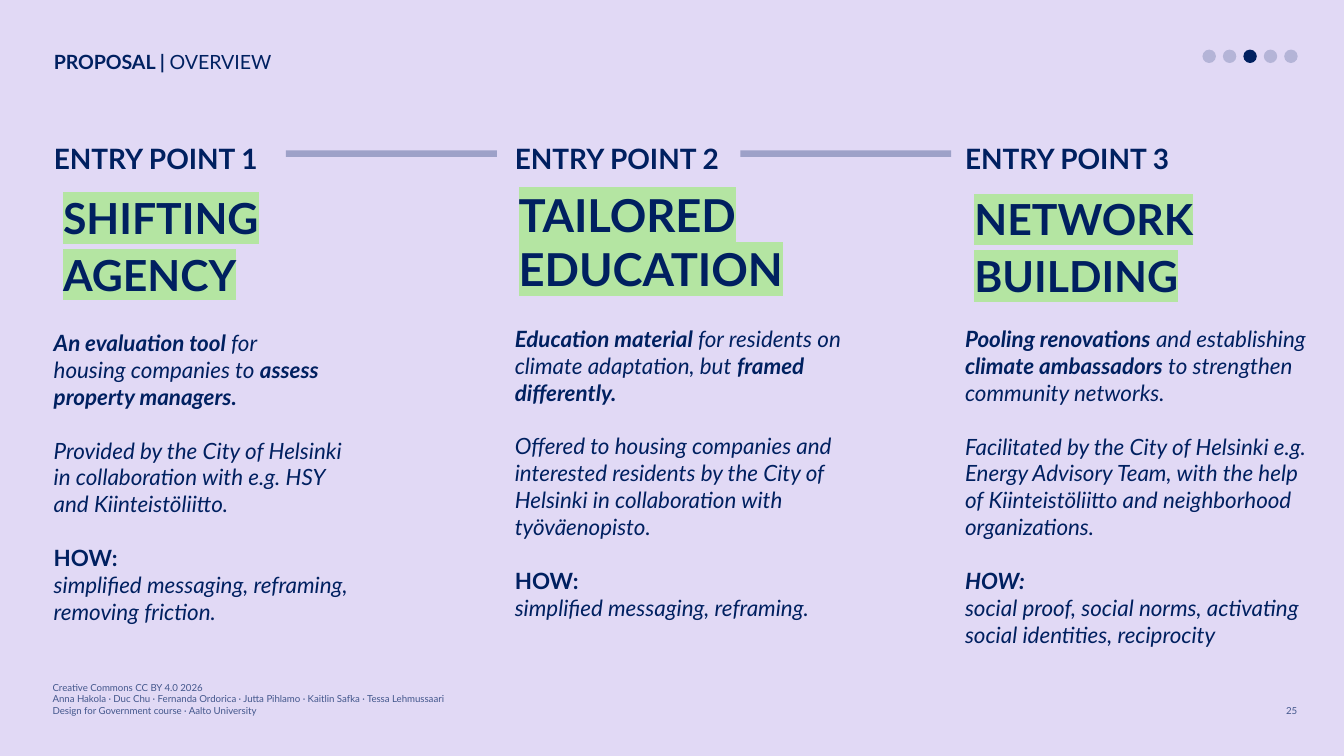
from lxml.etree import SubElement
from pptx import Presentation
from pptx.dml.color import RGBColor
from pptx.enum.shapes import MSO_SHAPE as SHAPE
from pptx.enum.text import MSO_ANCHOR as ANCHOR, MSO_AUTO_SIZE as AUTO, PP_ALIGN as ALIGN
from pptx.oxml.ns import qn
from pptx.util import Pt

COLORS = {"bg": "E1D9F5", "navy": "002060", "green": "B4E5A2"}
FONT = "Lato"
BODY_LINE = 14.4

COLUMNS = [
    {
        "entry": "ENTRY POINT 1",
        "heading": "SHIFTING AGENCY",
        "box": (28.8, 75.6, 161.3, 261.4),
        "heading_box": (28.8, 97.2, 131.8, 67.7),
        "heading_size": 22.9,
        "heading_spacing": 1.1,
        "body_top": 176.4,
        "body": [
            [[("An evaluation tool ", "bi"), ("for", "i")],
             [("housing companies to ", "i"), ("assess property managers.", "bi")]],
            [[("Provided by the City of Helsinki in collaboration with e.g. HSY "
               "and Kiinteistöliitto.", "i")]],
            [[("HOW:", "b")],
             [("simplified messaging, reframing, removing friction.", "i")]],
        ],
    },
    {
        "entry": "ENTRY POINT 2",
        "heading": "TAILORED EDUCATION",
        "box": (275.8, 75.6, 185, 262.1),
        "heading_box": (272.9, 97.2, 167, 67.7),
        "heading_size": 24.3,
        "heading_spacing": 1,
        "body_top": 174.2,
        "body": [
            [[("Education material ", "bi"),
              ("for residents on climate adaptation, but ", "i"),
              ("framed differently.", "bi")]],
            [[("Offered to housing companies and interested residents by the City of "
               "Helsinki in collaboration with työväenopisto.", "i")]],
            [[("HOW:", "b")],
             [("simplified messaging, reframing.", "i")]],
        ],
    },
    {
        "entry": "ENTRY POINT 3",
        "heading": "NETWORK BUILDING",
        "box": (517, 75.6, 185, 283),
        "heading_box": (517, 97.9, 141.8, 67.7),
        "heading_size": 22.9,
        "heading_spacing": 1.1,
        "body_top": 174.2,
        "body": [
            [[("Pooling renovations", "bi"), (" and establishing ", "i"),
              ("climate ambassadors", "bi"),
              (" to strengthen community networks.", "i")]],
            [[("Facilitated by the City of Helsinki e.g. Energy Advisory Team, with the help "
               "of Kiinteistöliitto and neighborhood organizations.", "i")]],
            [[("HOW:", "bi")],
             [("social proof, social norms, activating social identities, reciprocity", "i")]],
        ],
    },
]


def rgb(name):
    return RGBColor.from_string(COLORS[name])


def set_alpha(element, percent):
    for clr in element.iter(qn("a:srgbClr")):
        SubElement(clr, qn("a:alpha"), val=str(percent * 1000))


def place(sp, box):
    sp.left, sp.top, sp.width, sp.height = (Pt(v) for v in box)


def write(sp, groups, size, align=ALIGN.LEFT, anchor=ANCHOR.TOP, inset=(0, 0),
          spacing=None, highlight=None, alpha=None, gap=0):
    tf = sp.text_frame
    tf.word_wrap = True
    tf.auto_size = AUTO.NONE
    tf.vertical_anchor = anchor
    tf.margin_left = tf.margin_right = Pt(inset[0])
    tf.margin_top = tf.margin_bottom = Pt(inset[1])
    p = None
    for group in groups:
        for i, runs in enumerate(group):
            before = gap if p is not None and i == 0 else 0
            p = tf.paragraphs[0] if p is None else tf.add_paragraph()
            p.alignment = align
            p.space_before = Pt(before)
            if spacing:
                p.line_spacing = spacing
            for text, style in runs:
                r = p.add_run()
                r.text = text
                font = r.font
                font.size = Pt(size)
                font.bold = "b" in style
                font.italic = "i" in style
                font.color.rgb = rgb("navy")
                rpr = r._r.get_or_add_rPr()
                if alpha:
                    set_alpha(rpr, alpha)
                if highlight:
                    mark = SubElement(rpr, qn("a:highlight"))
                    SubElement(mark, qn("a:srgbClr"), val=COLORS[highlight])
                font.name = FONT


def add_text(slide, box, groups, size, **fmt):
    sp = slide.shapes.add_textbox(*(Pt(v) for v in box))
    write(sp, groups, size, **fmt)


def add_mark(slide, kind, box, alpha=None):
    sp = slide.shapes.add_shape(kind, *(Pt(v) for v in box))
    sp.shadow.inherit = False
    sp.line.fill.background()
    sp.fill.solid()
    sp.fill.fore_color.rgb = rgb("navy")
    if alpha:
        set_alpha(sp._element.spPr, alpha)


def add_title(slide, box):
    title = slide.shapes.title
    place(title, box)
    write(title, [[[("PROPOSAL | ", "b"), ("OVERVIEW", "")]]], 10.5)


def add_progress(slide, box, count, current):
    left, top, width, size = box
    pitch = (width - size) / (count - 1)
    for i in range(count):
        add_mark(slide, SHAPE.OVAL, (left + i * pitch, top, size, size),
                 None if i == current else 20)


def add_column(slide, box, col):
    left, top, width, height = box
    add_text(slide, (left, top, 126, 23), [[[(col["entry"], "b")]]], 15)
    add_text(slide, col["heading_box"], [[[(col["heading"], "b")]]], col["heading_size"],
             inset=(5, 2.9), spacing=col["heading_spacing"], highlight="green")
    body_top = col["body_top"]
    add_text(slide, (left, body_top, width, top + height - body_top), col["body"], 12,
             gap=BODY_LINE)


def add_footer(slide, box):
    left, top, width, height = box
    credits = [
        "Creative Commons CC BY 4.0 2026",
        "Anna Hakola · Duc Chu · Fernanda Ordorica · Jutta Pihlamo · Kaitlin Safka "
        "· Tessa Lehmussaari",
        "Design for Government course · Aalto University",
    ]
    fmt = {"anchor": ANCHOR.BOTTOM, "alpha": 70}
    add_text(slide, (left, top, 310, height), [[[(line, "")] for line in credits]], 5.2, **fmt)
    add_text(slide, (left + width - 40, top, 40, height), [[[("25", "")]]], 5.2,
             align=ALIGN.RIGHT, **fmt)


def main():
    prs = Presentation()
    prs.slide_width, prs.slide_height = Pt(720), Pt(405)
    slide = prs.slides.add_slide(prs.slide_layouts[5])
    slide.background.fill.solid()
    slide.background.fill.fore_color.rgb = rgb("bg")

    add_title(slide, (28.8, 26.6, 310, 13))
    add_progress(slide, (644.2, 26.6, 51, 7.2), count=5, current=2)
    for left in (153.2, 396.6):
        add_mark(slide, SHAPE.RECTANGLE, (left, 80.5, 113, 3.6), 30)
    for col in COLUMNS:
        add_column(slide, col["box"], col)
    add_footer(slide, (28.2, 358.6, 666.8, 25.2))

    prs.save("out.pptx")


if __name__ == "__main__":
    main()
